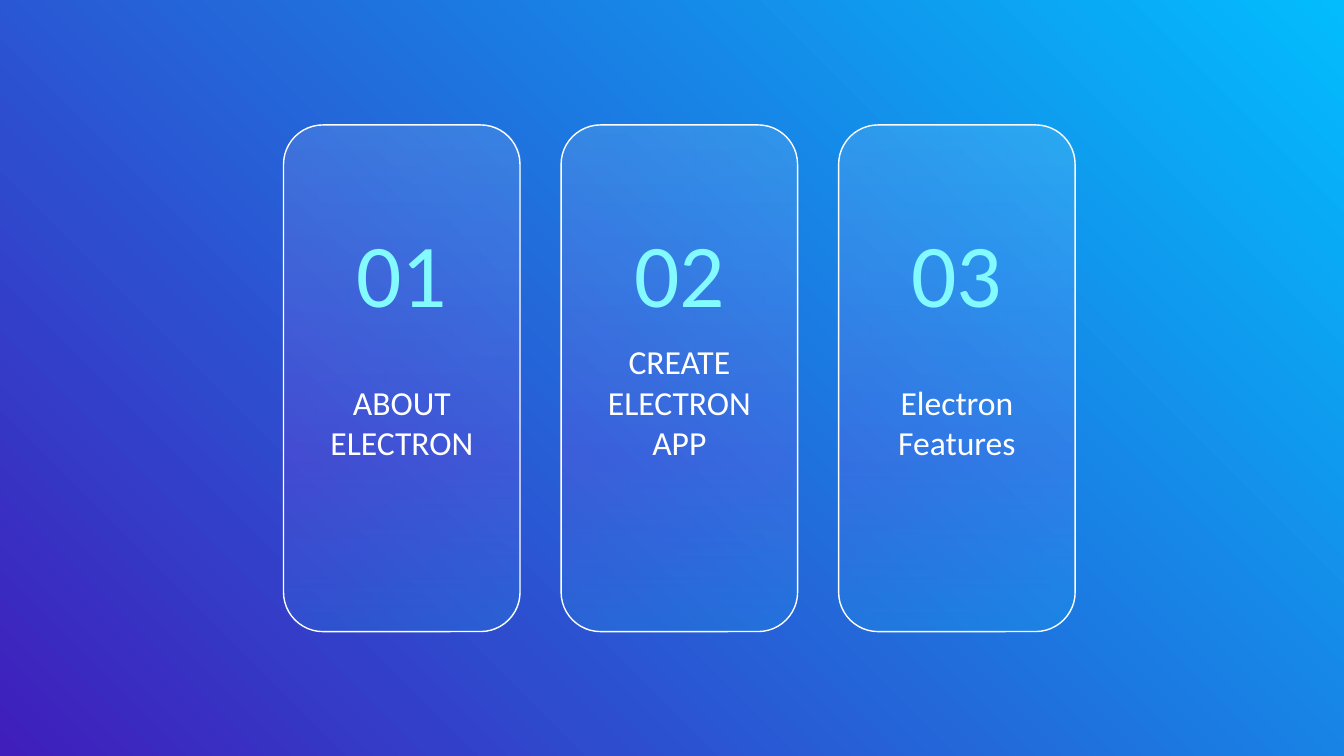
"""Builds a three-card agenda slide on a diagonal gradient."""
import dataclasses

import pptx
import pptx.dml.color
import pptx.enum.shapes
import pptx.enum.text
import pptx.oxml
import pptx.oxml.ns
import pptx.util

Inches = pptx.util.Inches


@dataclasses.dataclass(frozen=True)
class Theme:
    font: str = "Calibri"
    number_size: int = 48
    label_size: int = 18
    number_color: str = "83FAFF"
    white: str = "FFFFFF"
    background: tuple = ((0, "401EBB"), (100, "02BCFD"))
    glass: tuple = ((0, "FFFFFF"), (66, "E354F7"), (100, "10ECFF"))
    glass_opacity: int = 11


THEME = Theme()
CARDS = (
    ("01", "ABOUT ELECTRON"),
    ("02", "CREATE ELECTRON APP"),
    ("03", "Electron Features"),
)
SLIDE_WIDTH = 10
SLIDE_HEIGHT = SLIDE_WIDTH * 9 / 16
CARD_TOP, CARD_WIDTH, CARD_HEIGHT = 0.93, 1.76, 3.77
FIRST_LEFT, LAST_LEFT = 2.11, 6.24
CARD_PITCH = (LAST_LEFT - FIRST_LEFT) / (len(CARDS) - 1)


def rgb(color):
    return pptx.dml.color.RGBColor.from_string(color)


def set_gradient(fill, element, stops, angle, opacity=100):
    fill.gradient()
    fill.gradient_angle = angle
    gs_list = element.find(".//" + pptx.oxml.ns.qn("a:gsLst"))
    for gs in list(gs_list):
        gs_list.remove(gs)
    for position, color in stops:
        gs_list.append(pptx.oxml.parse_xml(
            f'<a:gs {pptx.oxml.ns.nsdecls("a")} pos="{position * 1000}">'
            f'<a:srgbClr val="{color}"><a:alpha val="{opacity * 1000}"/></a:srgbClr></a:gs>'))


def add_card(s, left):
    sp = s.shapes.add_shape(
        pptx.enum.shapes.MSO_SHAPE.ROUNDED_RECTANGLE,
        Inches(left), Inches(CARD_TOP), Inches(CARD_WIDTH), Inches(CARD_HEIGHT))
    sp.adjustments[0] = 0.167
    sp.shadow.inherit = False
    set_gradient(sp.fill, sp._element.spPr, THEME.glass, 270, THEME.glass_opacity)
    sp.line.color.rgb = rgb(THEME.white)
    sp.line.width = pptx.util.Pt(0.75)


def write_text(sp, text, *, center, top, width, height, size, color):
    sp.left, sp.top = Inches(center - width / 2), Inches(top)
    sp.width, sp.height = Inches(width), Inches(height)
    tf = sp.text_frame
    tf.word_wrap = True
    tf.auto_size = pptx.enum.text.MSO_AUTO_SIZE.NONE
    tf.vertical_anchor = pptx.enum.text.MSO_ANCHOR.BOTTOM
    tf.margin_left = tf.margin_right = tf.margin_top = tf.margin_bottom = Inches(0.1)
    p = tf.paragraphs[0]
    p.alignment = pptx.enum.text.PP_ALIGN.CENTER
    r = p.add_run()
    r.text = text
    r.font.name = THEME.font
    r.font.size = pptx.util.Pt(size)
    r.font.color.rgb = rgb(color)


def add_text_box(s):
    return s.shapes.add_textbox(0, 0, 0, 0)


def raise_title(s):
    sp = s.shapes.title
    s.shapes._spTree.append(sp._element)
    return sp


def main():
    prs = pptx.Presentation()
    prs.slide_width, prs.slide_height = Inches(SLIDE_WIDTH), Inches(SLIDE_HEIGHT)
    s = prs.slides.add_slide(prs.slide_layouts.get_by_name("Title Only"))
    set_gradient(s.background.fill, s._element, THEME.background, 45)

    for i, (number, label) in enumerate(CARDS):
        left = FIRST_LEFT + i * CARD_PITCH
        center = left + CARD_WIDTH / 2
        add_card(s, left)
        write_text(raise_title(s) if i == 0 else add_text_box(s), number,
                   center=center, top=1.36, width=1.55, height=1.16,
                   size=THEME.number_size, color=THEME.number_color)
        write_text(add_text_box(s), label,
                   center=center, top=2.9, width=1.71, height=0.64,
                   size=THEME.label_size, color=THEME.white)

    prs.save("out.pptx")


if __name__ == "__main__":
    main()
